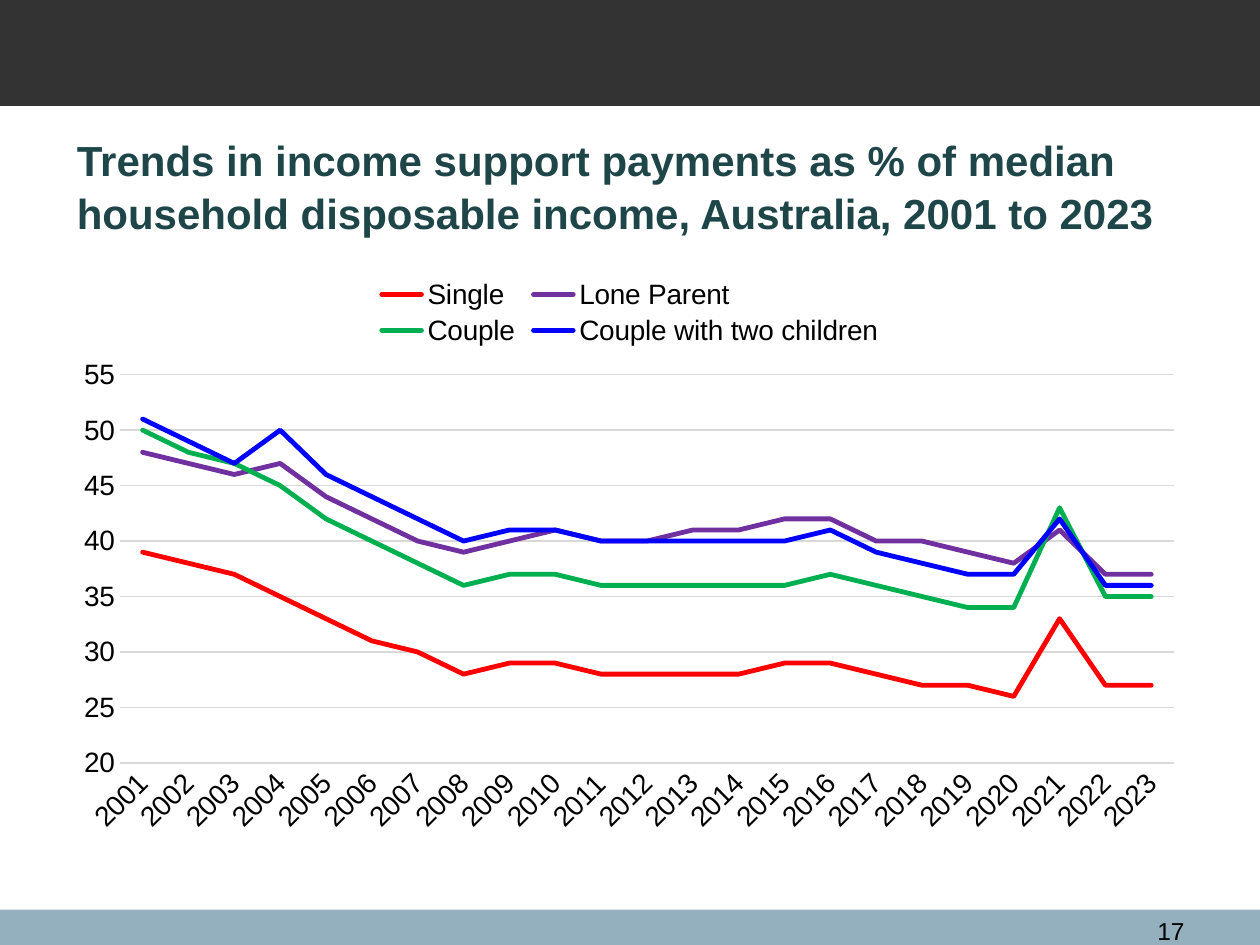
from lxml.etree import SubElement
from pptx import Presentation
from pptx.chart.data import CategoryChartData
from pptx.dml.color import RGBColor
from pptx.enum.chart import XL_CHART_TYPE, XL_LEGEND_POSITION, XL_TICK_MARK
from pptx.enum.shapes import MSO_SHAPE
from pptx.enum.text import MSO_ANCHOR, PP_ALIGN
from pptx.oxml import parse_xml
from pptx.oxml.ns import nsdecls, qn
from pptx.util import Inches, Pt

TITLE = ("Trends in income support payments as % of median "
         "household disposable income, Australia, 2001 to 2023")
PAGE_NUMBER = "17"
YEARS = [str(year) for year in range(2001, 2024)]
SERIES = [
    ("Single", "red", [39, 38, 37, 35, 33, 31, 30, 28, 29, 29, 28, 28,
                       28, 28, 29, 29, 28, 27, 27, 26, 33, 27, 27]),
    ("Lone Parent", "purple", [48, 47, 46, 47, 44, 42, 40, 39, 40, 41, 40, 40,
                               41, 41, 42, 42, 40, 40, 39, 38, 41, 37, 37]),
    ("Couple", "green", [50, 48, 47, 45, 42, 40, 38, 36, 37, 37, 36, 36,
                         36, 36, 36, 37, 36, 35, 34, 34, 43, 35, 35]),
    ("Couple with two children", "blue", [51, 49, 47, 50, 46, 44, 42, 40, 41, 41, 40, 40,
                                          40, 40, 40, 41, 39, 38, 37, 37, 42, 36, 36]),
]
COLORS = {"header": "333333", "footer": "94B0BE", "title": "1E4649", "text": "000000",
          "grid": "D9D9D9", "red": "FF0000", "purple": "7030A0",
          "green": "00B050", "blue": "0000FF"}
FONT = "Arial"
WIDTH, HEIGHT = 10, 7.5
HEADER_HEIGHT, FOOTER_HEIGHT = 0.84, 0.28
FOOTER_TOP = HEIGHT - FOOTER_HEIGHT
MARGIN = 0.5
CONTENT_WIDTH = WIDTH - 2 * MARGIN
LEGEND_AREA = (0.27, 0.02, 0.46, 0.13)
PLOT_AREA = (0.05, 0.19, 0.93, 0.67)


def rgb(name):
    return RGBColor.from_string(COLORS[name])


def style_font(font, size, color="text", bold=False):
    font.name, font.size, font.bold = FONT, Pt(size), bold
    font.color.rgb = rgb(color)


def write_text(box, text, size, color="text", bold=False, align=PP_ALIGN.LEFT,
               anchor=MSO_ANCHOR.TOP, spacing=1.0):
    frame = box.text_frame
    frame.word_wrap = True
    frame.vertical_anchor = anchor
    para = frame.paragraphs[0]
    para.alignment, para.line_spacing = align, spacing
    span = para.add_run()
    span.text = text
    style_font(span.font, size, color, bold)


def add_band(page, top, height, color):
    band = page.shapes.add_shape(MSO_SHAPE.RECTANGLE, 0, Inches(top),
                                 Inches(WIDTH), Inches(height))
    band.shadow.inherit = False
    band.fill.solid()
    band.fill.fore_color.rgb = rgb(color)
    band.line.fill.background()


def make_layout(area, inner=False):
    layout = parse_xml(f"<c:layout {nsdecls('c')}><c:manualLayout/></c:layout>")
    entries = [("layoutTarget", "inner")] if inner else []
    entries += [("xMode", "edge"), ("yMode", "edge")]
    entries += zip("xywh", area)
    for tag, value in entries:
        SubElement(layout[0], qn(f"c:{tag}")).set("val", str(value))
    return layout


def style_line(line, color, width):
    line.color.rgb = rgb(color)
    line.width = Pt(width)


def add_trend_chart(page):
    data = CategoryChartData()
    data.categories = YEARS
    for name, _, values in SERIES:
        data.add_series(name, values)
    chart = page.shapes.add_chart(XL_CHART_TYPE.LINE, Inches(MARGIN), Inches(2.1),
                                  Inches(CONTENT_WIDTH), Inches(4.6), data).chart
    style_font(chart.font, 10)
    chart.has_title = False
    chart.has_legend = True
    legend = chart.legend
    legend.position = XL_LEGEND_POSITION.TOP
    legend.include_in_layout = False
    style_font(legend.font, 16)
    legend._element.find(qn("c:legendPos")).addnext(make_layout(LEGEND_AREA))

    plot = chart.plots[0]
    plot.vary_by_categories = False
    plot_area = plot._element.getparent()
    for layout in plot_area.findall(qn("c:layout")):
        plot_area.remove(layout)
    plot_area.insert(0, make_layout(PLOT_AREA, inner=True))
    for series, (_, color, _) in zip(plot.series, SERIES):
        series.smooth = False
        style_line(series.format.line, color, 2.75)
        series.format.line._ln.set("cap", "rnd")

    for axis in (chart.category_axis, chart.value_axis):
        axis.major_tick_mark = axis.minor_tick_mark = XL_TICK_MARK.NONE
        style_font(axis.tick_labels.font, 16)
    years, percent = chart.category_axis, chart.value_axis
    style_line(years.format.line, "grid", 0.75)
    years._element.find(qn("c:txPr")).find(qn("a:bodyPr")).set("rot", "-2700000")
    percent.minimum_scale, percent.maximum_scale, percent.major_unit = 20, 55, 5
    percent.format.line.fill.background()
    style_line(percent.major_gridlines.format.line, "grid", 0.75)


def main():
    deck = Presentation()
    deck.slide_width, deck.slide_height = Inches(WIDTH), Inches(HEIGHT)
    page = deck.slides.add_slide(deck.slide_layouts[5])
    add_band(page, FOOTER_TOP, FOOTER_HEIGHT, "footer")
    add_band(page, 0, HEADER_HEIGHT, "header")

    title = page.shapes.title
    title.left, title.top = Inches(MARGIN + 0.01), Inches(HEADER_HEIGHT)
    title.width, title.height = Inches(CONTENT_WIDTH), Inches(1.25)
    write_text(title, TITLE, 24, color="title", bold=True,
               anchor=MSO_ANCHOR.MIDDLE, spacing=1.05)

    number = page.shapes.add_textbox(Inches(8.86), Inches(FOOTER_TOP),
                                     Inches(0.64), Inches(0.24))
    write_text(number, PAGE_NUMBER, 14, align=PP_ALIGN.RIGHT)
    add_trend_chart(page)
    deck.save("out.pptx")


if __name__ == "__main__":
    main()
